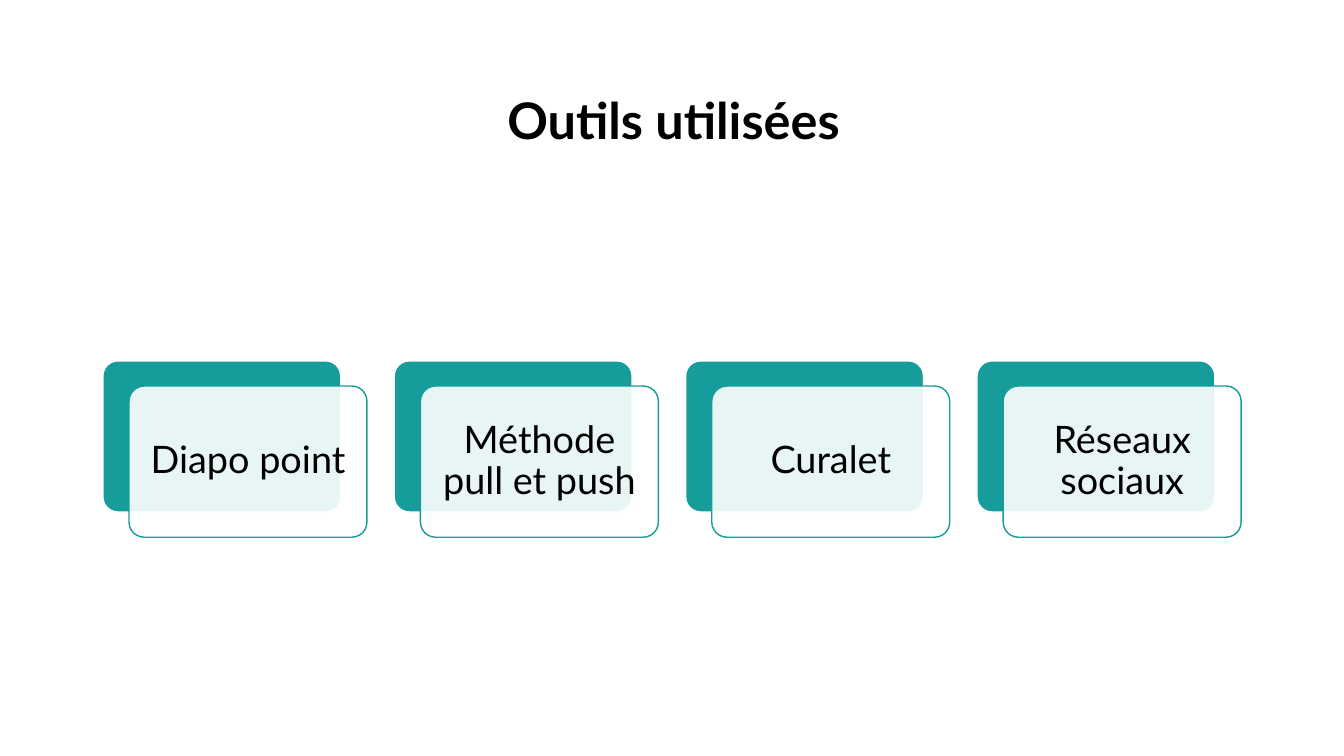
from lxml.etree import SubElement
from pptx import Presentation
from pptx.dml.color import RGBColor
from pptx.enum.shapes import MSO_SHAPE
from pptx.enum.text import MSO_ANCHOR, PP_ALIGN
from pptx.oxml.ns import qn
from pptx.util import Inches, Pt

TEAL, WHITE, BLACK = "169C9A", "FFFFFF", "000000"
TOOLS = ["Diapo point", "Méthode pull et push", "Curalet", "Réseaux sociaux"]
FIRST_LEFT, PITCH = 1.02, 2.89
CARD_TOP, CARD_WIDTH, CARD_HEIGHT = 3.58, 2.36, 1.5
FRONT_SHIFT_X, FRONT_SHIFT_Y = 0.26, 0.25
LABEL_MARGIN = 0.04

prs = Presentation()
prs.slide_width, prs.slide_height = Inches(13.33), Inches(7.5)
slide = prs.slides.add_slide(prs.slide_layouts[6])


def rgb(color):
    return RGBColor.from_string(color)


def add_label(text, left, top, width, height, inset, font_format):
    """Add a wrapped text box with its text centred both ways."""
    frame = slide.shapes.add_textbox(*map(Inches, (left, top, width, height))).text_frame
    frame.word_wrap = True
    frame.vertical_anchor = MSO_ANCHOR.MIDDLE
    for side in ("left", "top", "right", "bottom"):
        setattr(frame, f"margin_{side}", Inches(inset))
    paragraph = frame.paragraphs[0]
    paragraph.alignment = PP_ALIGN.CENTER
    paragraph.line_spacing = 0.9
    run = paragraph.add_run()
    run.text = text
    run.font.color.rgb = rgb(BLACK)
    for attribute, value in font_format.items():
        setattr(run.font, attribute, value)


add_label("Outils utilisées", 1.67, 0.6, 10.02, 1.24, 0.05,
          {"name": "Lato", "size": Pt(36), "bold": True})

for index, tool in enumerate(TOOLS):
    back_left = FIRST_LEFT + index * PITCH
    front_left, front_top = back_left + FRONT_SHIFT_X, CARD_TOP + FRONT_SHIFT_Y
    for left, top, fill, outline in (
        (back_left, CARD_TOP, TEAL, WHITE),
        (front_left, front_top, WHITE, TEAL),
    ):
        card = slide.shapes.add_shape(
            MSO_SHAPE.ROUNDED_RECTANGLE, Inches(left), Inches(top),
            Inches(CARD_WIDTH), Inches(CARD_HEIGHT))
        card.adjustments[0] = 0.1
        card.shadow.inherit = False
        card.fill.solid()
        card.fill.fore_color.rgb = rgb(fill)
        card.line.color.rgb = rgb(outline)
        card.line.width = Pt(1)
    # The front card lets the teal card show through slightly
    front_color = card.fill._xPr.find(qn("a:solidFill"))[0]
    SubElement(front_color, qn("a:alpha"), val="90000")
    add_label(tool, front_left + LABEL_MARGIN, front_top + LABEL_MARGIN,
              CARD_WIDTH - 2 * LABEL_MARGIN, CARD_HEIGHT - 2 * LABEL_MARGIN, 0.11,
              {"name": "Lato", "size": Pt(27)})

prs.save("out.pptx")
